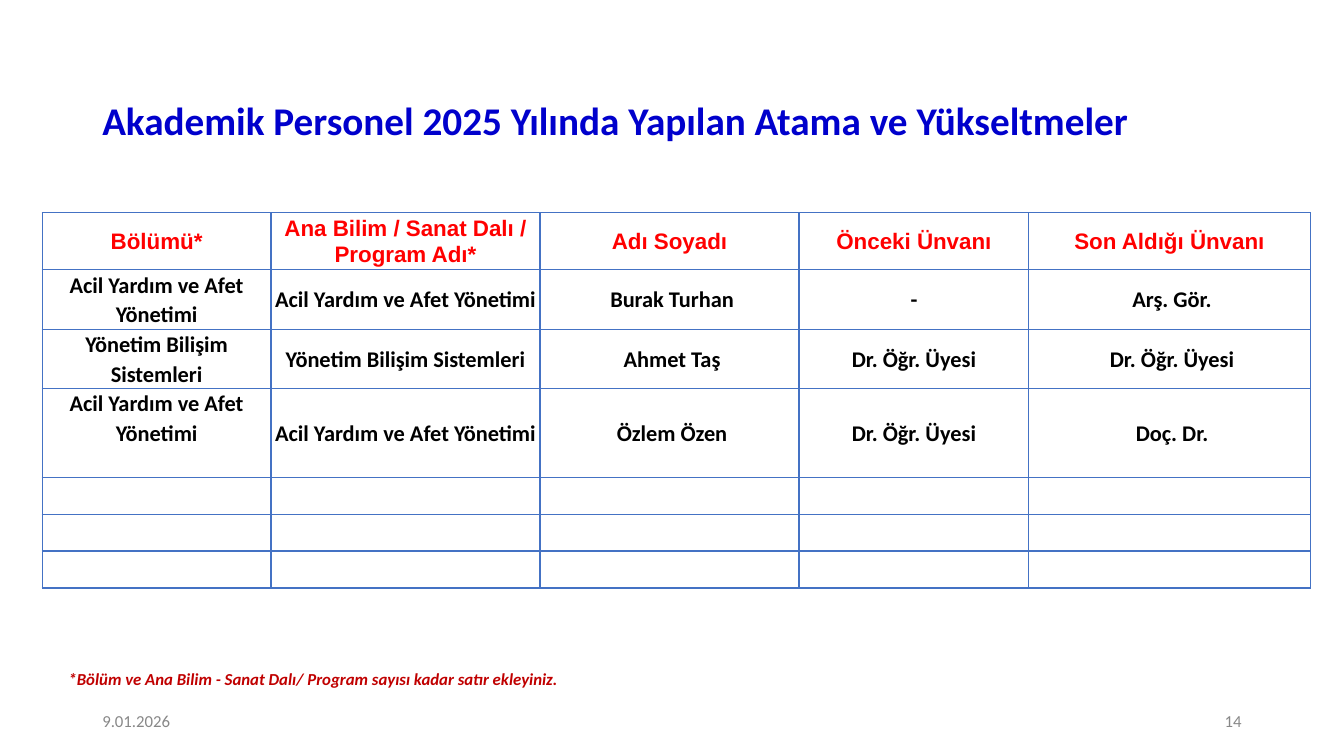
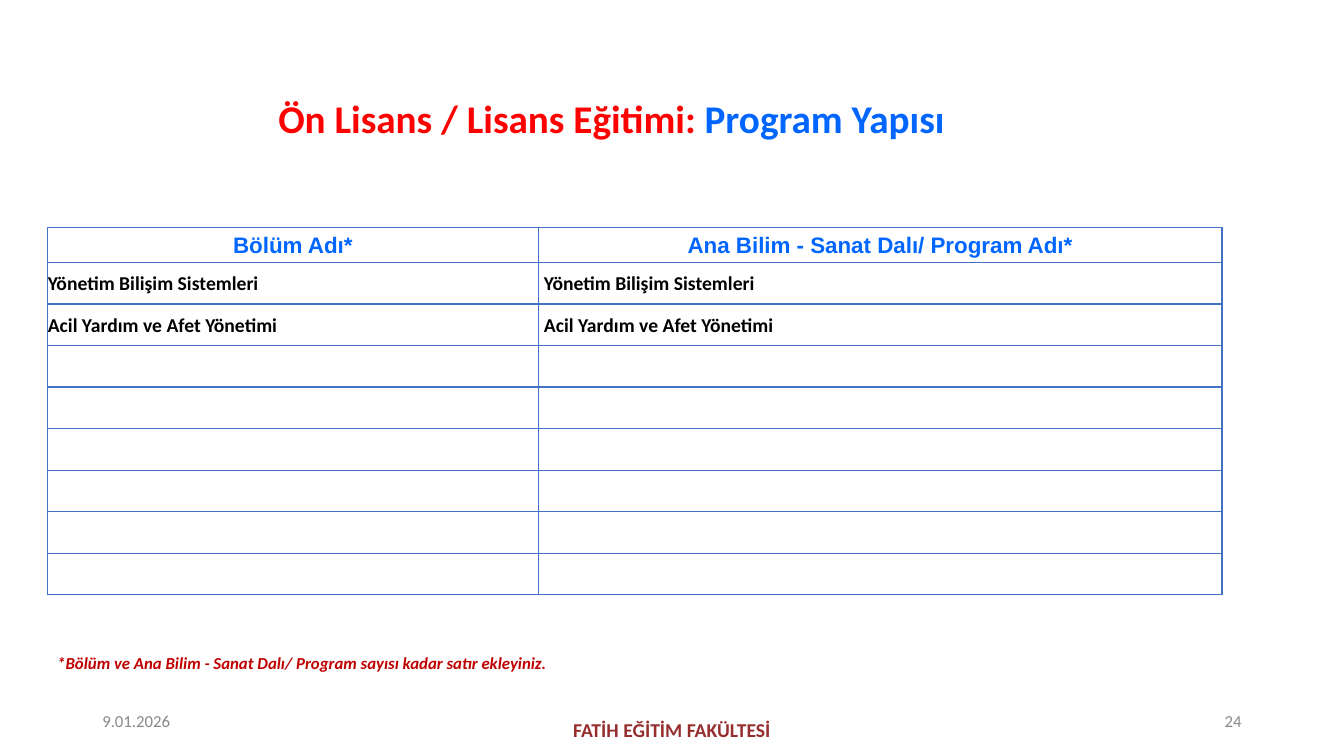
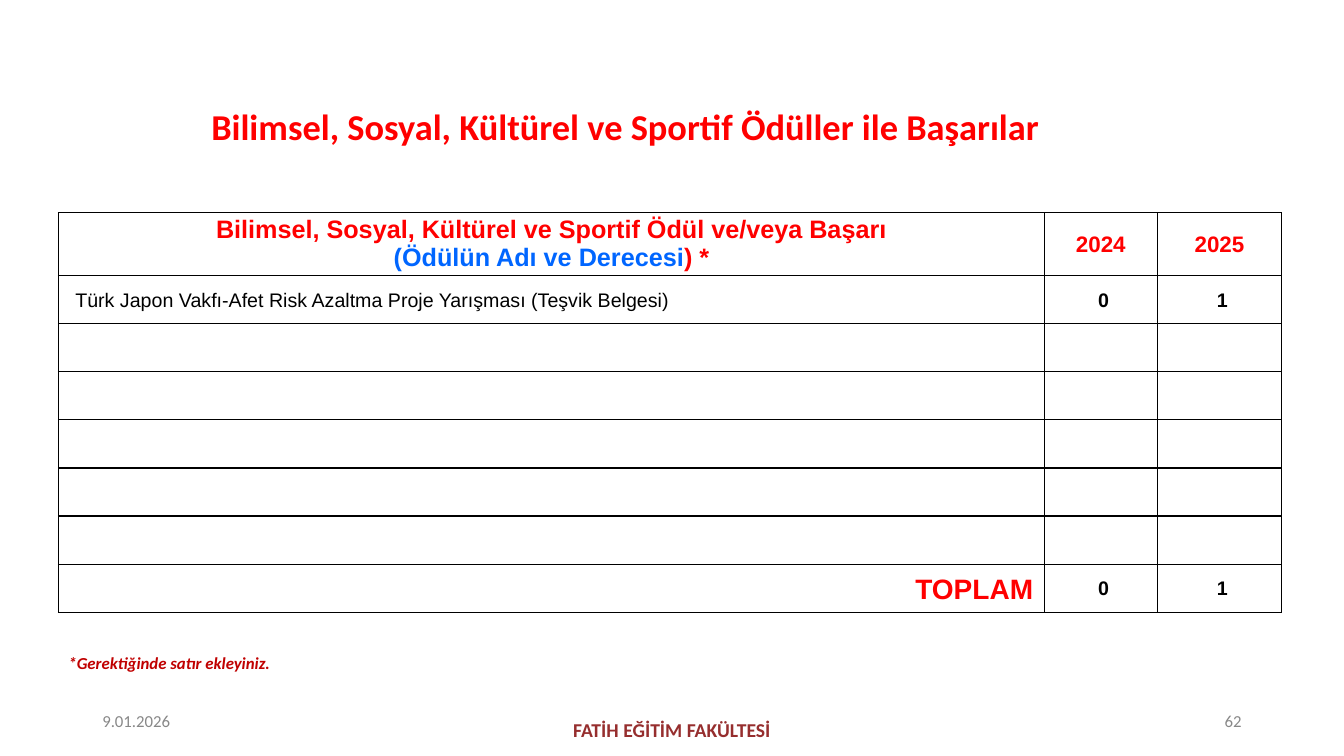
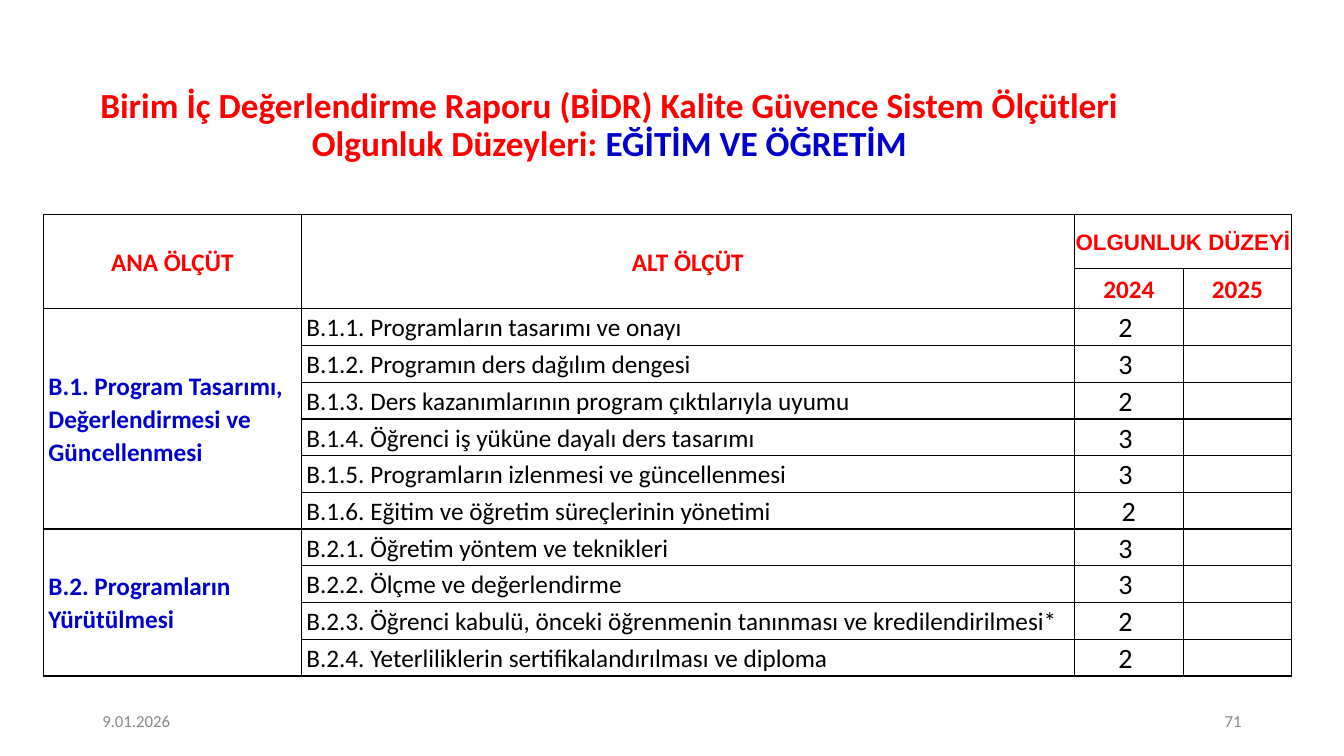
"""Build four report slides, each with a title, a table, a note and a footer."""
import pptx
import pptx.dml.color
import pptx.enum.text
import pptx.oxml
import pptx.oxml.ns
import pptx.util

Pt = pptx.util.Pt
Align = pptx.enum.text.PP_ALIGN
Anchor = pptx.enum.text.MSO_ANCHOR

INK = {"red": "FF0000", "navy": "0000CC", "blue": "0066FF", "black": "000000",
       "grey": "888888", "dark": "C00000", "wine": "962E2E", "line": "4472C4"}
ALIGN = {"l": Align.LEFT, "c": Align.CENTER, "r": Align.RIGHT}
ANCHOR = {"t": Anchor.TOP, "m": Anchor.MIDDLE}

DATE = "9.01.2026"
UNIT = "FATİH EĞİTİM FAKÜLTESİ"
ADD = "*Bölüm ve Ana Bilim - Sanat Dalı/ Program sayısı kadar satır ekleyiniz."
ACIL = "Acil Yardım ve Afet Yönetimi"
BILISIM = "Yönetim Bilişim Sistemleri"
UYE = "Dr. Öğr. Üyesi"

HEAD = dict(font="Arial", size=16, ink="red", bold=True, align="c")
NAME = dict(size=16, bold=True, align="c")
PUSH = dict(NAME, pad=(3.6, 0, 0, 0))
UNITS = dict(size=14, bold=True)
SUM = dict(font="Arial", size=14, bold=True, align="c", pad=(9, 0, 5, 0))
TOP = dict(size=18, ink="red", bold=True, align="c")
MAIN = dict(size=18, ink="navy", bold=True, pad=(3.6, 0, 3.6, 0))
SUB = dict(size=18, pad=(3.6, 0, 3.6, 0))
MARK = dict(size=20, align="c", pad=(3.6, 0, 8.2, 0))

SLIDES = [
    dict(
        title=[("Akademik Personel 2025 Yılında Yapılan Atama ve Yükseltmeler", "navy")],
        size=28, box=(26, 62.5, 826.5, 50), page="14",
        note=(ADD, 41.8, 473.8),
        at=(30.2, 151.9), line="line",
        cols=[163.4, 192.2, 185, 164.2, 200.9],
        rows=[40.6, 42.6, 42.6, 63.2] + [26.4] * 3,
        heads=[HEAD], body=[NAME, NAME, PUSH, NAME, PUSH],
        cells=[
            ["Bölümü*", "Ana Bilim / Sanat Dalı / Program Adı*", "Adı Soyadı",
             "Önceki Ünvanı", "Son Aldığı Ünvanı"],
            [ACIL, ACIL, "Burak Turhan", "-", "Arş. Gör."],
            [BILISIM, BILISIM, "Ahmet Taş", UYE, UYE],
            [ACIL, ACIL, "Özlem Özen", UYE, "Doç. Dr."],
        ],
        special={(3, 0): dict(anchor="t")},
    ),
    dict(
        title=[("Ön Lisans / Lisans Eğitimi: ", "red"), ("Program Yapısı", "blue")],
        size=28, box=(25.2, 60.5, 823, 51), page="24", unit=UNIT,
        note=(ADD, 33.8, 463),
        at=(33.8, 162.7), line="line",
        cols=[350.9, 488.2], rows=[24.7] + [29.7] * 8,
        heads=[dict(HEAD, ink="blue")],
        body=[dict(UNITS, pad=(0.4, 0, 0, 0)), dict(UNITS, pad=(3.9, 0, 0, 0))],
        cells=[
            ["Bölüm Adı*", "Ana Bilim - Sanat Dalı/ Program Adı*"],
            [BILISIM, BILISIM],
            [ACIL, ACIL],
        ],
    ),
    dict(
        title=[("Bilimsel, Sosyal, Kültürel ve Sportif Ödüller ile Başarılar", "red")],
        size=26, box=(41.8, 69.8, 810.7, 44), page="62", unit=UNIT,
        note=("*Gerektiğinde satır ekleyiniz.", 41.8, 463),
        at=(41.8, 151.9), line="black",
        cols=[704.2, 80.6, 88.9], rows=[44.8] + [34.4] * 7,
        heads=[HEAD],
        body=[dict(font="Arial", size=14, pad=(12, 0, 5, 0)), SUM, SUM],
        cells=[
            [[[("Bilimsel, Sosyal, Kültürel ve Sportif Ödül ve/veya Başarı", "red")],
              [("(Ödülün Adı ve Derecesi", "blue"), (") *", "red")]],
             "2024", "2025"],
            ["Türk Japon Vakfı-Afet Risk Azaltma Proje Yarışması (Teşvik Belgesi)",
             "0", "1"],
            [], [], [], [], [],
            ["TOPLAM", "0", "1"],
        ],
        special={(0, 0): dict(size=18, space=1),
                 (7, 0): dict(size=20, ink="red", bold=True, align="r",
                              pad=(8, 0, 8, 0))},
    ),
    dict(
        title=[("Birim İç Değerlendirme Raporu (BİDR) Kalite Güvence Sistem Ölçütleri "
                "Olgunluk Düzeyleri: ", "red"), ("EĞİTİM VE ÖĞRETİM", "navy")],
        size=25.2, box=(31, 64.8, 808.6, 50.4), page="71",
        at=(31, 153.2), line="black",
        cols=[184.2, 552.2, 77.8, 77.4], rows=[38.6, 28.8] + [26.2] * 10,
        heads=[TOP, TOP], body=[MAIN, SUB, MARK, MARK],
        cells=[
            ["ANA ÖLÇÜT", "ALT ÖLÇÜT", "OLGUNLUK DÜZEYİ"],
            ["", "", "2024", "2025"],
            ["B.1. Program Tasarımı, Değerlendirmesi ve Güncellenmesi",
             "B.1.1. Programların tasarımı ve onayı", "2"],
            ["", "B.1.2. Programın ders dağılım dengesi", "3"],
            ["", "B.1.3. Ders kazanımlarının program çıktılarıyla uyumu", "2"],
            ["", "B.1.4. Öğrenci iş yüküne dayalı ders tasarımı", "3"],
            ["", "B.1.5. Programların izlenmesi ve güncellenmesi", "3"],
            ["", "B.1.6. Eğitim ve öğretim süreçlerinin yönetimi", "2"],
            ["B.2. Programların Yürütülmesi",
             "B.2.1. Öğretim yöntem ve teknikleri", "3"],
            ["", "B.2.2. Ölçme ve değerlendirme", "3"],
            ["", "B.2.3. Öğrenci kabulü, önceki öğrenmenin tanınması ve "
                 "kredilendirilmesi*", "2"],
            ["", "B.2.4. Yeterliliklerin sertifikalandırılması ve diploma", "2"],
        ],
        special={(0, 2): HEAD, (7, 2): dict(pad=(3.6, 0, 3.6, 0))},
        spans=[(0, 0, 1, 0), (0, 1, 1, 1), (0, 2, 0, 3), (2, 0, 7, 0), (8, 0, 11, 0)],
    ),
]


def write(frame, text, font="Calibri", size=12, ink="black", bold=False,
          slant=False, align="l", space=1):
    """Fill a frame with a string, or with paragraphs of (text, ink) runs."""
    paras = [[(text, ink)]] if isinstance(text, str) else text
    for i, runs in enumerate(paras):
        para = frame.add_paragraph() if i else frame.paragraphs[0]
        para.alignment = ALIGN[align]
        para.line_spacing = space
        for words, tone in runs:
            run = para.add_run()
            run.text = words
            face = run.font
            face.name, face.size, face.bold, face.italic = font, Pt(size), bold, slant
            face.color.rgb = pptx.dml.color.RGBColor.from_string(INK[tone])


def label(slide, text, box, anchor="m", **style):
    """Add a text box."""
    frame = slide.shapes.add_textbox(*map(Pt, box)).text_frame
    frame.word_wrap = True
    frame.vertical_anchor = ANCHOR[anchor]
    write(frame, text, **style)


def edge(cell, ink):
    """Draw the four borders of a cell."""
    props = cell._tc.get_or_add_tcPr()
    for i, side in enumerate("LRTB"):
        props.insert(i, pptx.oxml.parse_xml(
            f'<a:ln{side} {pptx.oxml.ns.nsdecls("a")} w="12700"><a:solidFill>'
            f'<a:srgbClr val="{INK[ink]}"/></a:solidFill></a:ln{side}>'))


def grid(slide, data):
    """Add the table of a slide."""
    cols, rows, cells = data["cols"], data["rows"], data["cells"]
    size = (sum(cols), sum(rows))
    table = slide.shapes.add_table(
        len(rows), len(cols), *map(Pt, data["at"] + size)).table
    table.first_row = table.horz_banding = False
    for col, wide in zip(table.columns, cols):
        col.width = Pt(wide)
    for r, high in enumerate(rows):
        table.rows[r].height = Pt(high)
        line = cells[r] if r < len(cells) else []
        for c in range(len(cols)):
            base = data["heads"][r] if r < len(data["heads"]) else data["body"][c]
            style = dict(space=1.07, pad=(0, 0, 0, 0), anchor="m")
            style.update(base)
            style.update(data.get("special", {}).get((r, c), {}))
            cell = table.cell(r, c)
            cell.fill.background()
            edge(cell, data["line"])
            pad = map(Pt, style.pop("pad"))
            cell.margin_left, cell.margin_top, cell.margin_right, cell.margin_bottom = pad
            cell.vertical_anchor = ANCHOR[style.pop("anchor")]
            if c < len(line) and line[c]:
                write(cell.text_frame, line[c], **style)
    for r1, c1, r2, c2 in data.get("spans", []):
        table.cell(r1, c1).merge(table.cell(r2, c2))


def head(slide, data):
    """Place and fill the title."""
    title = slide.shapes.title
    title.left, title.top, title.width, title.height = map(Pt, data["box"])
    frame = title.text_frame
    frame.auto_size = pptx.enum.text.MSO_AUTO_SIZE.NONE
    frame.vertical_anchor = ANCHOR["m"]
    write(frame, [data["title"]], size=data["size"], bold=True, align="c", space=0.9)


def foot(slide, data):
    """Add the note, date, unit and page number."""
    if "note" in data:
        text, left, top = data["note"]
        label(slide, text, (left, top, 610, 21.8), anchor="t",
              ink="dark", bold=True, slant=True)
    if "unit" in data:
        label(slide, data["unit"], (318, 507, 324, 28.8),
              size=14, ink="wine", bold=True, align="c")
    label(slide, DATE, (66, 500.5, 216, 28.8), ink="grey")
    label(slide, data["page"], (678, 500.5, 216, 28.8), ink="grey", align="r")


def main():
    """Build and save the slides."""
    deck = pptx.Presentation()
    deck.slide_width, deck.slide_height = Pt(960), Pt(540)
    for data in SLIDES:
        slide = deck.slides.add_slide(deck.slide_layouts[5])
        head(slide, data)
        grid(slide, data)
        foot(slide, data)
    deck.save("out.pptx")


if __name__ == "__main__":
    main()
